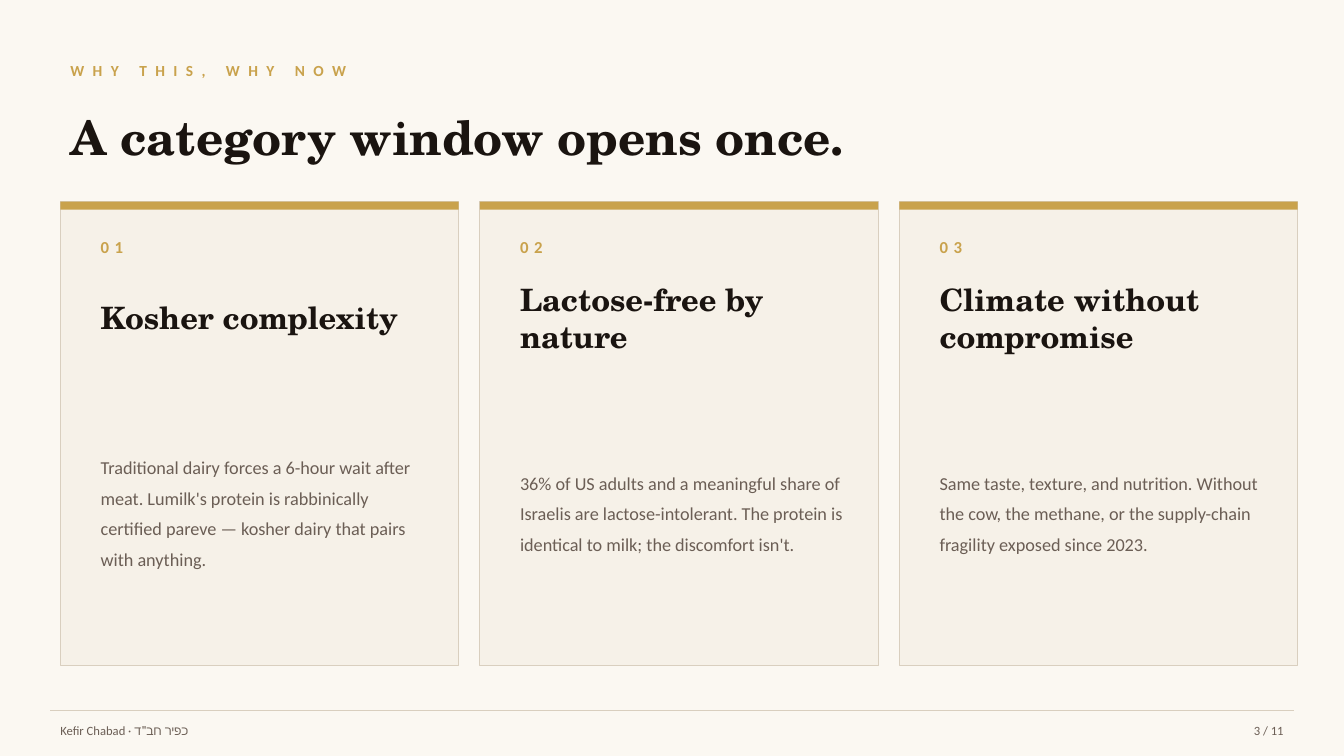
"""Build the "Why this, why now" slide: three reason cards under a headline."""
import pptx
import pptx.dml.color
import pptx.enum.shapes
import pptx.enum.text
import pptx.oxml
import pptx.oxml.ns
import pptx.util

COLORS = {
    "paper": "FBF8F2",
    "card": "F6F1E8",
    "border": "D9CFBF",
    "gold": "C9A24C",
    "ink": "1A1410",
    "muted": "6B5E55",
}
SERIF, SANS = "TeX Gyre Schola", "Calibri"
LEFT = 0.6
CARD_TOP, CARD_WIDTH, CARD_HEIGHT, CARD_PITCH = 2, 3.95, 4.6, 4.16
CARD_PADDING, CARD_TEXT_WIDTH = 0.3, 3.4
FOOTER_LEFT, FOOTER_RIGHT, FOOTER_RULE, FOOTER_TOP = 0.5, 12.83, 7.05, 7.1
REASONS = [
    ("Kosher complexity",
     "Traditional dairy forces a 6-hour wait after meat. Lumilk's protein is rabbinically "
     "certified pareve — kosher dairy that pairs with anything."),
    ("Lactose-free by nature",
     "36% of US adults and a meaningful share of Israelis are lactose-intolerant. "
     "The protein is identical to milk; the discomfort isn't."),
    ("Climate without compromise",
     "Same taste, texture, and nutrition. Without the cow, the methane, or the "
     "supply-chain fragility exposed since 2023."),
]


def color(name):
    """Look up a palette colour."""
    return pptx.dml.color.RGBColor.from_string(COLORS[name])


def write(box, place, text, size, ink, font=SANS, bold=False, tracking=0, align="LEFT"):
    """Place a text shape, fill it with one styled paragraph and return that paragraph."""
    box.left, box.top, box.width, box.height = map(pptx.util.Inches, place)
    frame = box.text_frame
    frame.word_wrap = True
    frame.auto_size = pptx.enum.text.MSO_AUTO_SIZE.NONE
    frame.vertical_anchor = pptx.enum.text.MSO_ANCHOR.MIDDLE
    paragraph = frame.paragraphs[0]
    run = paragraph.add_run()
    run.text = text
    if tracking:
        run._r.get_or_add_rPr().set("spc", str(tracking * 100))
    paragraph.alignment = getattr(pptx.enum.text.PP_ALIGN, align)
    paragraph.font.name = font
    paragraph.font.size = pptx.util.Pt(size)
    paragraph.font.bold = bold
    paragraph.font.color.rgb = color(ink)
    return paragraph


deck = pptx.Presentation()
deck.slide_width = pptx.util.Inches(13.33)
deck.slide_height = pptx.util.Inches(7.5)
slide = deck.slides.add_slide(deck.slide_layouts[5])
slide.background.fill.solid()
slide.background.fill.fore_color.rgb = color("paper")
shapes = slide.shapes

write(shapes.add_textbox(0, 0, 0, 0), (LEFT, 0.55, 8, 0.3),
      "WHY THIS, WHY NOW", 11, "gold", bold=True, tracking=6)
write(shapes.title, (LEFT, 1, 12, 0.7),
      "A category window opens once.", 34, "ink", SERIF, bold=True)

for index, (heading, explanation) in enumerate(REASONS):
    card_left = LEFT + index * CARD_PITCH
    text_left = card_left + CARD_PADDING
    for height, fill in ((CARD_HEIGHT, "card"), (0.08, "gold")):
        panel = shapes.add_shape(
            pptx.enum.shapes.MSO_SHAPE.RECTANGLE,
            *map(pptx.util.Inches, (card_left, CARD_TOP, CARD_WIDTH, height)))
        panel.shadow.inherit = False
        panel.fill.solid()
        panel.fill.fore_color.rgb = color(fill)
        if fill == "card":
            panel.line.color.rgb = color("border")
            panel.line.width = pptx.util.Pt(0.75)
        else:
            panel.line.fill.background()
    write(shapes.add_textbox(0, 0, 0, 0), (text_left, 2.25, 1, 0.4),
          f"{index + 1:02d}", 12, "gold", bold=True, tracking=4)
    write(shapes.add_textbox(0, 0, 0, 0), (text_left, 2.7, CARD_TEXT_WIDTH, 0.9),
          heading, 22, "ink", SERIF, bold=True)
    body = write(shapes.add_textbox(0, 0, 0, 0), (text_left, 3.7, CARD_TEXT_WIDTH, 2.7),
                 explanation, 13, "muted")
    body.line_spacing = 1.4

write(shapes.add_textbox(0, 0, 0, 0), (FOOTER_LEFT, FOOTER_TOP, 6, 0.3),
      "Kefir Chabad · כפיר חב״ד", 9, "muted")
write(shapes.add_textbox(0, 0, 0, 0), (FOOTER_RIGHT - 0.7, FOOTER_TOP, 0.7, 0.3),
      "3 / 11", 9, "muted", align="RIGHT")

footer_rule = shapes.add_connector(
    pptx.enum.shapes.MSO_CONNECTOR.STRAIGHT,
    *map(pptx.util.Inches, (FOOTER_LEFT, FOOTER_RULE, FOOTER_RIGHT, FOOTER_RULE)))
footer_rule.line.color.rgb = color("border")
footer_rule.line.width = pptx.util.Pt(0.5)
footer_rule._element.spPr.append(
    pptx.oxml.parse_xml(f"<a:effectLst {pptx.oxml.ns.nsdecls('a')}/>"))

deck.save("out.pptx")
